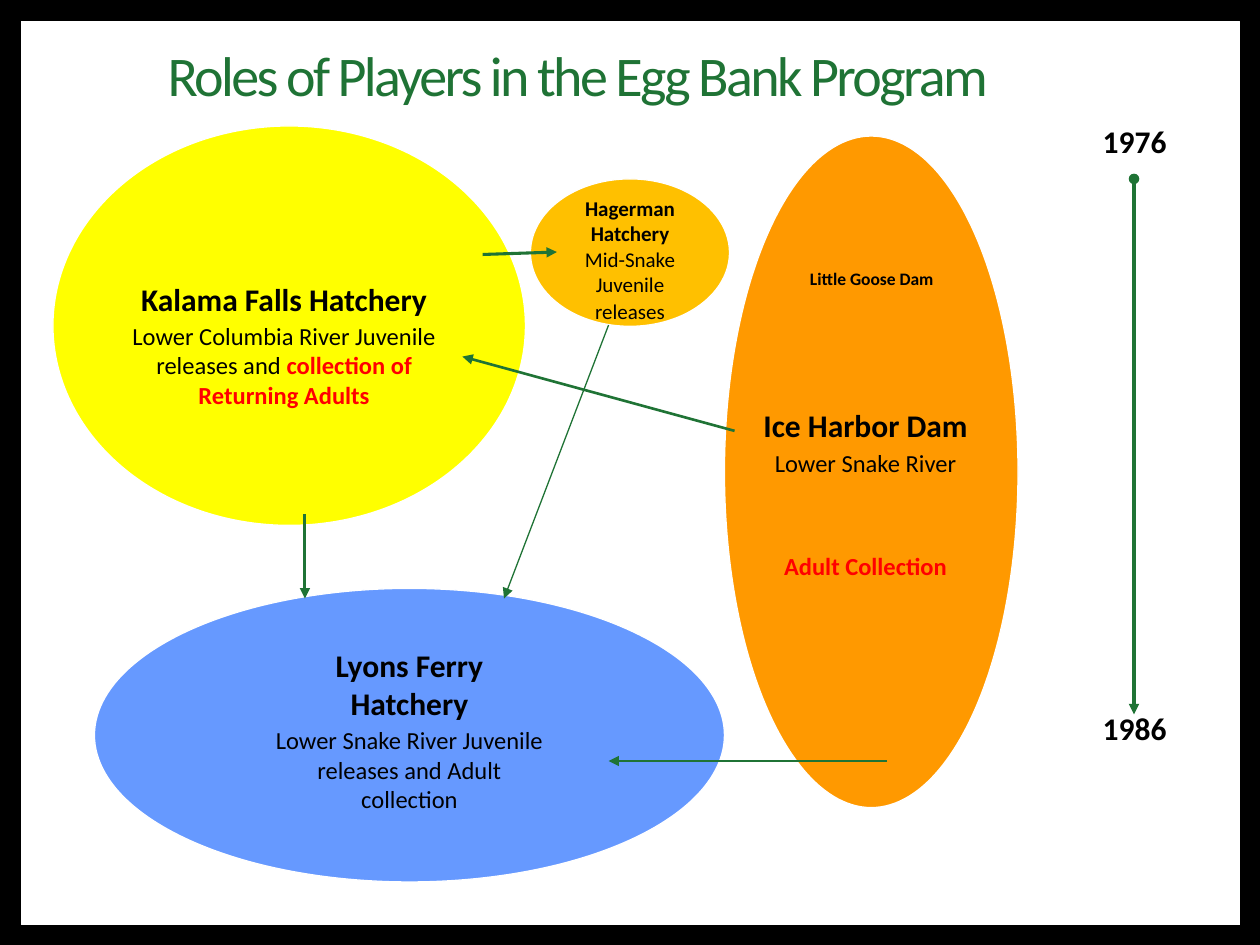
from lxml import etree
from pptx import Presentation
from pptx.dml.color import RGBColor
from pptx.enum.shapes import MSO_CONNECTOR, MSO_SHAPE
from pptx.enum.text import PP_ALIGN
from pptx.oxml.ns import qn
from pptx.util import Inches, Pt

BLACK, WHITE, RED, GREEN = "000000", "FFFFFF", "FF0000", "1F7335"


def color(hex_text):
    return RGBColor.from_string(hex_text)


def add_text(box, paragraphs, align=PP_ALIGN.CENTER):
    """Add a text box; each paragraph is (space before, runs), each run (text, size, bold, colour)."""
    shape = slide.shapes.add_textbox(*map(Inches, box))
    frame = shape.text_frame
    frame.word_wrap = True
    for index, (space, runs) in enumerate(paragraphs):
        paragraph = frame.add_paragraph() if index else frame.paragraphs[0]
        paragraph.alignment = align
        paragraph.space_before = Pt(space)
        for text, size, bold, hex_text in runs:
            run = paragraph.add_run()
            run.text = text
            run.font.name = "Calibri"
            run.font.size = Pt(size)
            run.font.bold = bold
            run.font.color.rgb = color(hex_text)
    return frame


presentation = Presentation()
presentation.slide_width = Inches(10)
presentation.slide_height = Inches(7.5)
slide = presentation.slides.add_slide(presentation.slide_layouts[6])
slide.background.fill.solid()
slide.background.fill.fore_color.rgb = color(BLACK)

# White panel and one ellipse per player
shapes = [
    (MSO_SHAPE.RECTANGLE, (0.17, 0.17, 9.67, 7.17), WHITE),
    (MSO_SHAPE.OVAL, (0.42, 1, 3.75, 3.17), "FFFF00"),
    (MSO_SHAPE.OVAL, (5.75, 1.08, 2.33, 5.33), "FF9900"),
    (MSO_SHAPE.OVAL, (0.75, 4.67, 5, 2.33), "6699FF"),
    (MSO_SHAPE.OVAL, (4.21, 1.42, 1.58, 1.17), "FFC000"),
]
for kind, box, fill in shapes:
    shape = slide.shapes.add_shape(kind, *map(Inches, box))
    shape.shadow.inherit = False
    shape.fill.solid()
    shape.fill.fore_color.rgb = color(fill)
    shape.line.color.rgb = color(WHITE)
    shape.line.width = Pt(0.75)

# Title
title = add_text(
    (1.33, 0.38, 7.08, 0.58),
    [(0, [("Roles of Players in the Egg Bank Program", 32, False, GREEN)])],
    PP_ALIGN.LEFT,
)
title.margin_left = title.margin_right = title.margin_top = title.margin_bottom = 0
title.paragraphs[0].line_spacing = 0.9
title.paragraphs[0].runs[0].font._element.set("spc", "-150")

# Player descriptions
add_text((0.92, 2.17, 2.67, 1.5), [
    (0, [("Kalama Falls Hatchery", 18, True, BLACK)]),
    (2.1, [("Lower Columbia River Juvenile releases and ", 14, False, BLACK),
           ("collection of Returning Adults", 14, True, RED)]),
])
add_text((5.83, 3.17, 2.08, 1.53), [
    (0, [("Ice Harbor Dam", 18, True, BLACK)]),
    (2.8, [("Lower Snake River", 14, False, BLACK)]),
    (42, [("Adult Collection", 14, True, RED)]),
])
add_text((2.08, 5.08, 2.34, 1.9), [
    (0, [("Lyons Ferry Hatchery", 18, True, BLACK)]),
    (2.1, [("Lower Snake River Juvenile releases and Adult collection", 14, False, BLACK)]),
])
add_text((4.29, 1.5, 1.42, 1.13), [
    (0, [("Hagerman Hatchery", 12, True, BLACK)]),
    (0.6, [("Mid-Snake Juvenile", 12, False, BLACK)]),
    (0.6, [("releases", 12, False, BLACK)]),
])
add_text((6.33, 2.08, 1.42, 0.27),
         [(0, [("Little Goose Dam", 10, True, BLACK)])], PP_ALIGN.LEFT)

# Timeline years
for year, top in (("1976", 0.92), ("1986", 5.58)):
    add_text((8.42, top, 1.17, 0.4), [(0, [(year, 18, True, BLACK)])])

# Timeline and transfers: start and end points, width, start marker
arrows = [
    ((9, 1.42, 9, 5.67), 2, "oval"),
    ((5.83, 3.42, 3.67, 2.83), 1.5, None),
    ((7.04, 6.04, 4.83, 6.04), 1.5, None),
    ((2.42, 4.08, 2.42, 4.75), 1.75, None),
    ((4.83, 2.58, 4, 4.75), 0.75, None),
    ((3.83, 2.02, 4.42, 2), 1.75, None),
]
for points, width, start_marker in arrows:
    arrow = slide.shapes.add_connector(MSO_CONNECTOR.STRAIGHT, *map(Inches, points))
    arrow.line.color.rgb = color(GREEN)
    arrow.line.width = Pt(width)
    properties = arrow._element.spPr
    line = properties.find(qn("a:ln"))
    if start_marker:
        etree.SubElement(line, qn("a:headEnd"), type=start_marker)
    etree.SubElement(line, qn("a:tailEnd"), type="triangle")
    etree.SubElement(properties, qn("a:effectLst"))

presentation.save("out.pptx")
